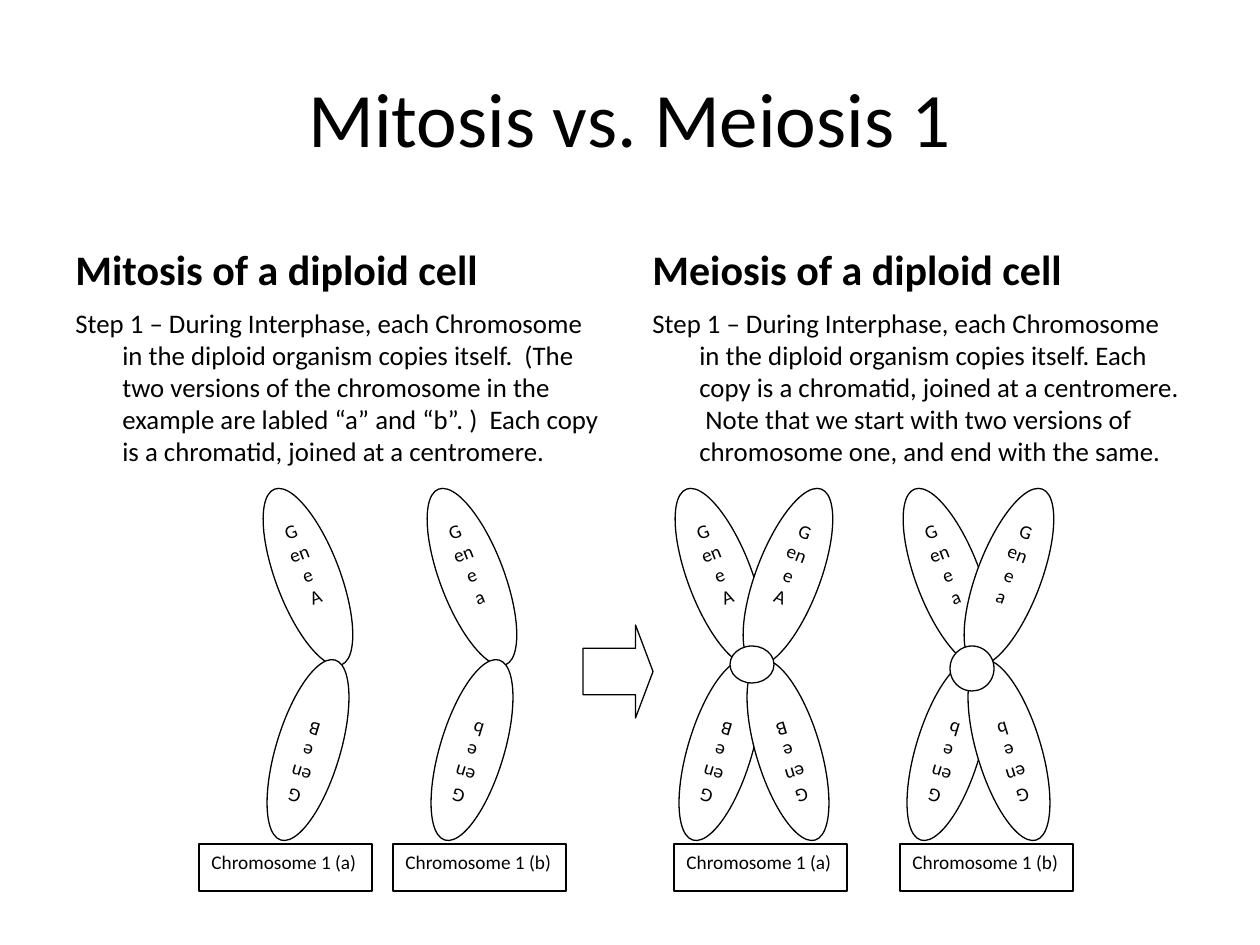
from lxml import etree
from pptx import Presentation
from pptx.dml.color import RGBColor
from pptx.enum.shapes import MSO_SHAPE
from pptx.enum.text import MSO_ANCHOR, PP_ALIGN
from pptx.util import Emu, Pt

ELLIPSE, RECTANGLE = MSO_SHAPE.OVAL, MSO_SHAPE.RECTANGLE
RIGHT_ARROW = MSO_SHAPE.RIGHT_ARROW
TOP, MIDDLE, BOTTOM = MSO_ANCHOR.TOP, MSO_ANCHOR.MIDDLE, MSO_ANCHOR.BOTTOM
LEFT, CENTER = PP_ALIGN.LEFT, PP_ALIGN.CENTER

PX_PER_INCH = 126
FONT = "Calibri"
BLACK, WHITE = "000000", "FFFFFF"

COLUMNS = [
    (63, "Mitosis of a diploid cell",
     "Step 1 – During Interphase, each Chromosome in the diploid organism "
     "copies itself.  (The two versions of the chromosome in the example are "
     "labled “a” and “b”. )  Each copy is a chromatid, joined at a centromere."),
    (640, "Meiosis of a diploid cell",
     "Step 1 – During Interphase, each Chromosome in the diploid organism "
     "copies itself. Each copy is a chromatid, joined at a centromere.  Note "
     "that we start with two versions of chromosome one, and end with the same."),
]

# version, left of chromatid, left of label
SINGLE_CHROMOSOMES = [("a", 276, 199), ("b", 440, 393)]
# version, left of each sister chromatid, left of label, centromere left and height
DOUBLED_CHROMOSOMES = [("a", 688, 756, 674, 730, 37), ("b", 916, 977, 900, 950, 45)]
GENES = {"a": ("Gene A", "Gene B"), "b": ("Gene a", "Gene b")}


def px(length):
    return Emu(round(length * 914400 / PX_PER_INCH))


def color(hex_string):
    return RGBColor.from_string(hex_string)


def write(box, text, size=11, bold=False, align=LEFT, anchor=TOP, after=0, hanging=0):
    frame = box.text_frame
    frame.word_wrap = True
    frame.vertical_anchor = anchor
    para = frame.paragraphs[0]
    para.alignment = align
    para.space_after = Pt(after)
    if hanging:
        properties = para._p.get_or_add_pPr()
        properties.set("marL", str(px(hanging)))
        properties.set("indent", str(-px(hanging)))
    span = para.add_run()
    span.text = text
    span.font.name = FONT
    span.font.size = Pt(size)
    span.font.bold = bold
    span.font.color.rgb = color(BLACK)


class SlideBuilder:
    """Holds the outline style and the slide being filled."""

    def __init__(self, slide, line_width=0.75):
        self.slide = slide
        self.line_width = Pt(line_width)

    def text(self, left, top, width, height, text, **style):
        box = self.slide.shapes.add_textbox(px(left), px(top), px(width), px(height))
        write(box, text, **style)

    def shape(self, kind, left, top, width, height, rotation=0):
        shape = self.slide.shapes.add_shape(kind, px(left), px(top), px(width), px(height))
        shape.rotation = rotation
        shape.shadow.inherit = False
        shape.fill.solid()
        shape.fill.fore_color.rgb = color(WHITE)
        shape.line.color.rgb = color(BLACK)
        shape.line.width = self.line_width
        return shape

    def chromatid(self, left, version, mirrored=False):
        """Draw two gene arms; a mirrored chromatid leans the other way."""
        arms = zip(GENES[version], (483, 656), (339.2, 196.8))
        for gene, top, rotation in arms:
            angle = 360 - rotation if mirrored else rotation
            arm = self.shape(ELLIPSE, left, top, 64, 188, angle)
            write(arm, gene, align=CENTER, after=10)

    def label(self, left, version):
        box = self.shape(RECTANGLE, left, 844, 173, 47)
        write(box, f"Chromosome 1 ({version})", after=10)

    def arrow(self, left, top, width, height):
        arrow = self.shape(RIGHT_ARROW, left, top, width, height)
        arrow.adjustments[0] = 0.5
        arrow.adjustments[1] = 0.25


def main():
    deck = Presentation()
    deck.slide_width, deck.slide_height = px(1260), px(945)
    page = SlideBuilder(deck.slides.add_slide(deck.slide_layouts[6]))

    page.text(63, 38, 1134, 158, "Mitosis vs. Meiosis 1", size=44, align=CENTER, anchor=MIDDLE)
    for left, heading, body in COLUMNS:
        page.text(left, 212, 557, 88, heading, size=24, bold=True, anchor=BOTTOM)
        page.text(left, 300, 557, 173, body, size=15.3, hanging=47)

    for version, left, label_left in SINGLE_CHROMOSOMES:
        page.chromatid(left, version)
        page.label(label_left, version)

    for version, left, sister_left, label_left, center_left, center_height in DOUBLED_CHROMOSOMES:
        page.chromatid(left, version)
        page.label(label_left, version)
        page.chromatid(sister_left, version, mirrored=True)
        page.shape(ELLIPSE, center_left, 646, 44, center_height)

    page.arrow(583, 625, 70, 93)
    deck.save("out.pptx")


if __name__ == "__main__":
    main()
